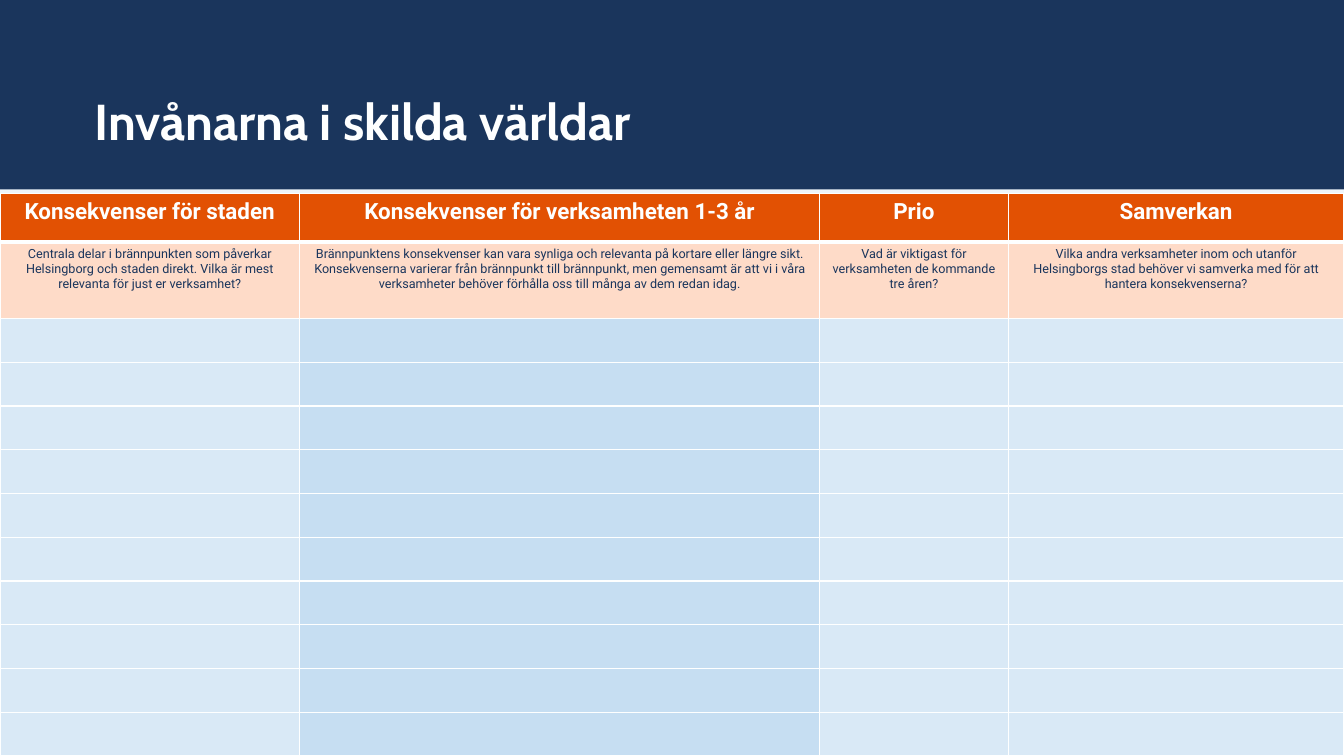
import pptx
import pptx.dml.color
import pptx.enum.shapes
import pptx.enum.text
import pptx.oxml.ns
import pptx.util
from dataclasses import dataclass
from lxml import etree

Inches = pptx.util.Inches
Pt = pptx.util.Pt

TITLE = "Invånarna i skilda världar"
# heading, guiding text, column width, opacity of the empty cells in percent
COLUMNS = [
    ("Konsekvenser för staden",
     "Centrala delar i brännpunkten som påverkar Helsingborg och staden direkt. "
     "Vilka är mest relevanta för just er verksamhet?", 2.97, 50),
    ("Konsekvenser för verksamheten 1-3 år",
     "Brännpunktens konsekvenser kan vara synliga och relevanta på kortare eller längre sikt. "
     "Konsekvenserna varierar från brännpunkt till brännpunkt, men gemensamt är att vi i våra "
     "verksamheter behöver förhålla oss till många av dem redan idag.", 5.16, 100),
    ("Prio",
     "Vad är viktigast för verksamheten de kommande tre åren?", 1.87, 50),
    ("Samverkan",
     "Vilka andra verksamheter inom och utanför Helsingborgs stad behöver vi samverka med "
     "för att hantera konsekvenserna?", 3.33, 50),
]
EMPTY_ROWS = 10

PAGE_WIDTH, PAGE_HEIGHT = 13.33, 7.5
BANNER_HEIGHT = 1.88
TABLE_TOP = 1.92
HEADING_HEIGHT, GUIDE_HEIGHT = 0.48, 0.76


@dataclass(frozen=True)
class Theme:
    page: str = "EEF5FB"
    navy: str = "1A355C"
    white: str = "FEFFFF"
    orange: str = "E25103"
    peach: str = "FEDBC8"
    blue: str = "C6DEF2"
    title_font: str = "Cabin"
    table_font: str = "Roboto"
    title_size: int = 36
    heading_size: int = 16
    guide_size: int = 9
    thin_line: int = 1
    thick_line: int = 3


THEME = Theme()


def paint(fill, color):
    fill.solid()
    fill.fore_color.rgb = pptx.dml.color.RGBColor.from_string(color)


def write(para, text, font, size, color, bold):
    span = para.add_run()
    span.text = text
    span.font.name = font
    span.font.size = Pt(size)
    span.font.bold = bold
    span.font.color.rgb = pptx.dml.color.RGBColor.from_string(color)


def draw_borders(cell, top, bottom):
    """Give a cell white borders; must run before the cell is filled."""
    qn = pptx.oxml.ns.qn
    properties = cell._tc.get_or_add_tcPr()
    widths = {"L": THEME.thin_line, "R": THEME.thin_line, "T": top, "B": bottom}
    for side, width in widths.items():
        line = etree.SubElement(properties, qn(f"a:ln{side}"), w=str(Pt(width)))
        solid = etree.SubElement(line, qn("a:solidFill"))
        etree.SubElement(solid, qn("a:srgbClr"), val=THEME.white)


def set_opacity(cell, percent):
    qn = pptx.oxml.ns.qn
    color = cell._tc.tcPr.find(qn("a:solidFill")).find(qn("a:srgbClr"))
    etree.SubElement(color, qn("a:alpha"), val=str(percent * 1000))


def add_banner(page):
    banner = page.shapes.add_shape(pptx.enum.shapes.MSO_SHAPE.RECTANGLE, 0, 0,
                                   Inches(PAGE_WIDTH), Inches(BANNER_HEIGHT))
    banner.shadow.inherit = False
    paint(banner.fill, THEME.navy)
    banner.line.fill.background()

    box = page.shapes.add_textbox(Inches(0.94), Inches(0.24), Inches(10), Inches(1.26))
    frame = box.text_frame
    frame.word_wrap = True
    frame.vertical_anchor = pptx.enum.text.MSO_ANCHOR.BOTTOM
    frame.margin_left = frame.margin_right = frame.margin_top = frame.margin_bottom = 0
    para = frame.paragraphs[0]
    para.line_spacing = 0.9
    write(para, TITLE, THEME.title_font, THEME.title_size, THEME.white, True)


def add_worksheet(page):
    height = PAGE_HEIGHT - TABLE_TOP
    empty_height = (height - HEADING_HEIGHT - GUIDE_HEIGHT) / EMPTY_ROWS
    row_heights = [HEADING_HEIGHT, GUIDE_HEIGHT] + [empty_height] * EMPTY_ROWS
    table = page.shapes.add_table(len(row_heights), len(COLUMNS), 0, Inches(TABLE_TOP),
                                  Inches(PAGE_WIDTH), Inches(height)).table
    table.first_row = table.horz_banding = False
    for row, row_height in zip(table.rows, row_heights):
        row.height = Inches(row_height)

    text_styles = [
        (THEME.orange, THEME.heading_size, THEME.white, True),
        (THEME.peach, THEME.guide_size, THEME.navy, False),
    ]
    for column, (heading, guide, width, opacity) in enumerate(COLUMNS):
        table.columns[column].width = Inches(width)
        for row in range(len(row_heights)):
            cell = table.cell(row, column)
            draw_borders(cell,
                         top=THEME.thick_line if row == 1 else THEME.thin_line,
                         bottom=THEME.thick_line if row == 0 else THEME.thin_line)
            if row < len(text_styles):
                background, size, color, bold = text_styles[row]
                paint(cell.fill, background)
                para = cell.text_frame.paragraphs[0]
                para.alignment = pptx.enum.text.PP_ALIGN.CENTER
                write(para, (heading, guide)[row], THEME.table_font, size, color, bold)
            else:
                paint(cell.fill, THEME.blue)
                if opacity < 100:
                    set_opacity(cell, opacity)


def main():
    deck = pptx.Presentation()
    deck.slide_width, deck.slide_height = Inches(PAGE_WIDTH), Inches(PAGE_HEIGHT)
    page = deck.slides.add_slide(deck.slide_layouts[6])
    paint(page.background.fill, THEME.page)
    add_banner(page)
    add_worksheet(page)
    deck.save("out.pptx")


if __name__ == "__main__":
    main()
